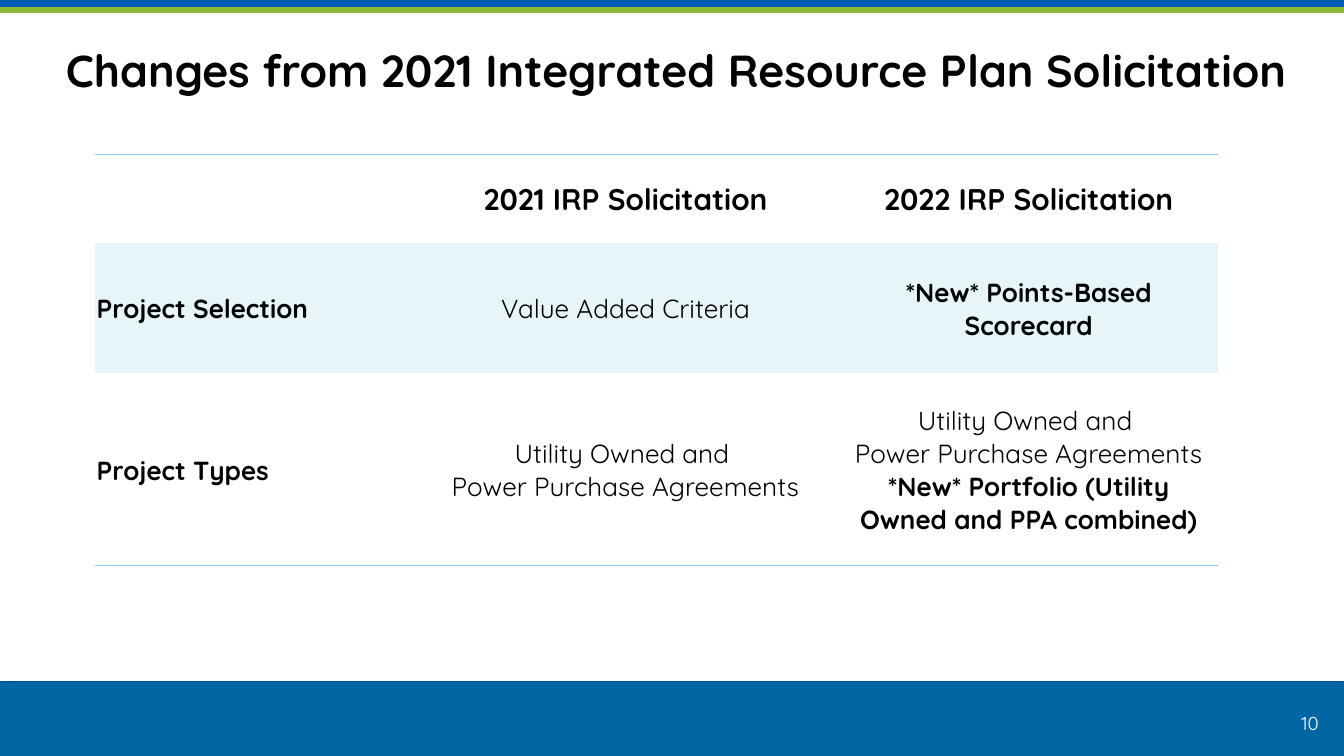
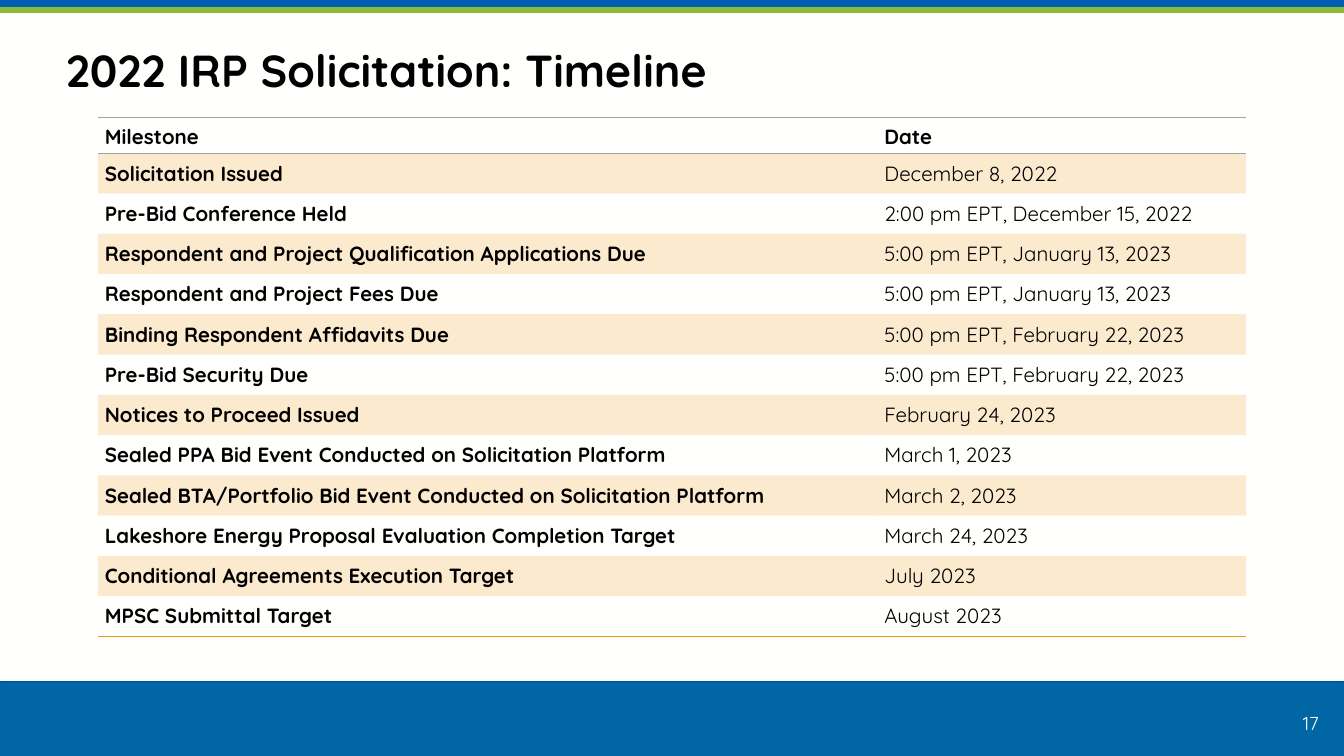
from lxml import etree
from pptx import Presentation
from pptx.dml.color import RGBColor
from pptx.enum.shapes import MSO_SHAPE
from pptx.enum.text import MSO_ANCHOR, MSO_AUTO_SIZE, PP_ALIGN
from pptx.oxml.ns import qn
from pptx.util import Inches, Pt

RECT = MSO_SHAPE.RECTANGLE
LOW, MID = MSO_ANCHOR.BOTTOM, MSO_ANCHOR.MIDDLE
LEFT, MID_X, RIGHT = PP_ALIGN.LEFT, PP_ALIGN.CENTER, PP_ALIGN.RIGHT
FIXED = MSO_AUTO_SIZE.NONE

WIDE, HIGH = Inches(10), Inches(5.625)
FONT = "Quicksand"
PLAIN = "{2D5ABB26-0587-4C30-8999-92F81FD0307C}"
PAPER = RGBColor(0xFF, 0xFF, 0xFE)
INK = RGBColor(0, 0, 0)
BLUE = RGBColor(0x00, 0x5D, 0xB4)
NAVY = RGBColor(0x00, 0x52, 0x94)
GREEN = RGBColor(0x8E, 0xBB, 0x37)
FOOT = RGBColor(0x00, 0x67, 0xA4)
SKY = RGBColor(0x89, 0xCD, 0xE1)
ICE = RGBColor(0xE7, 0xF5, 0xF9)
AMBER = RGBColor(0xF2, 0x98, 0x13)
GREY = RGBColor(0xA0, 0xA0, 0xA0)

# Top, height (percent of the slide), fill, line
BANDS = [
    (0, 1.42, BLUE, None),
    (1.07, 0.53, GREEN, GREEN),
    (90.13, 0.53, BLUE, NAVY),
    (90.49, 9.51, FOOT, FOOT),
]

NEW = "*New*"
DEALS = "Utility Owned and \vPower Purchase Agreements"
CHANGES = [
    ("", "2021 IRP Solicitation", "2022 IRP Solicitation"),
    ("Project Selection", "Value Added Criteria", f"{NEW} Points-Based Scorecard"),
    ("Project Types", DEALS,
     [f"{DEALS} ", f"{NEW} Portfolio (Utility Owned and PPA combined)"]),
]
DATES = [
    ("Milestone", "Date"),
    ("Solicitation Issued", "December 8, 2022"),
    ("Pre-Bid Conference Held", "2:00 pm EPT, December 15, 2022"),
    ("Respondent and Project Qualification Applications Due",
     "5:00 pm EPT, January 13, 2023"),
    ("Respondent and Project Fees Due", "5:00 pm EPT, January 13, 2023"),
    ("Binding Respondent Affidavits Due", "5:00 pm EPT, February 22, 2023"),
    ("Pre-Bid Security Due", "5:00 pm EPT, February 22, 2023"),
    ("Notices to Proceed Issued", "February 24, 2023"),
    ("Sealed PPA Bid Event Conducted on Solicitation Platform", "March 1, 2023"),
    ("Sealed BTA/Portfolio Bid Event Conducted on Solicitation Platform",
     "March 2, 2023"),
    ("Lakeshore Energy Proposal Evaluation Completion Target", "March 24, 2023"),
    ("Conditional Agreements Execution Target", "July 2023"),
    ("MPSC Submittal Target", "August 2023"),
]


def across(part):
    """Turn a percentage of the slide's width into a length."""
    return int(WIDE * part / 100)


def down(part):
    """Turn a percentage of the slide's height into a length."""
    return int(HIGH * part / 100)


def frame(left, top, width, height):
    """Return a box given in percent of the slide."""
    return across(left), down(top), across(width), down(height)


def style(run, size, color, bold=False):
    """Set the font of a run."""
    font = run.font
    font.name, font.size, font.bold = FONT, Pt(size), bold
    font.color.rgb = color


def add_band(slide, top, height, fill, line):
    """Draw one full-width band."""
    band = slide.shapes.add_shape(RECT, *frame(0, top, 100, height))
    band.shadow.inherit = False
    band.fill.solid()
    band.fill.fore_color.rgb = fill
    if line is None:
        band.line.fill.background()
    else:
        band.line.color.rgb = line
        band.line.width = Pt(0.75)


def set_title(slide, text, width):
    """Place and format the title."""
    title = slide.shapes.title
    title.left, title.top, title.width, title.height = frame(3.9, 2.49, width, 11.2)
    body = title.text_frame
    body.text = text
    body.auto_size, body.word_wrap = FIXED, True
    body.vertical_anchor = LOW
    line = body.paragraphs[0]
    line.alignment, line.line_spacing = LEFT, 0.9
    style(line.runs[0], 24, INK, True)


def add_number(slide, number):
    """Write the page number in the footer."""
    body = slide.shapes.add_textbox(*frame(95, 93.87, 4.1, 4.09)).text_frame
    body.text = str(number)
    body.word_wrap, body.vertical_anchor = True, LOW
    line = body.paragraphs[0]
    line.alignment = RIGHT
    style(line.runs[0], 10, PAPER)


def add_slide(deck, title, width, number):
    """Start a slide with its bands, title and page number."""
    slide = deck.slides.add_slide(deck.slide_layouts[5])
    slide.background.fill.solid()
    slide.background.fill.fore_color.rgb = PAPER
    for band in BANDS:
        add_band(slide, *band)
    set_title(slide, title, width)
    add_number(slide, number)
    return slide


def add_rule(cell, side, color, width):
    """Draw a cell border on the top (T) or bottom (B)."""
    props = cell._tc.get_or_add_tcPr()
    rule = etree.Element(qn(f"a:ln{side}"), w=str(Pt(width)))
    fill = etree.SubElement(rule, qn("a:solidFill"))
    etree.SubElement(fill, qn("a:srgbClr"), val=str(color))
    spot = len(props.findall(qn("a:lnT")))
    props.insert(spot, rule)


def tint(cell, color, alpha):
    """Fill a cell, with alpha as a percentage."""
    cell.fill.solid()
    cell.fill.fore_color.rgb = color
    if alpha < 100:
        tone = next(cell._tc.get_or_add_tcPr().iter(qn("a:srgbClr")))
        etree.SubElement(tone, qn("a:alpha"), val=str(alpha * 1000))


def write(cell, text, size, bold, align):
    """Write one cell, with its new items in bold."""
    cell.vertical_anchor = MID
    line = cell.text_frame.paragraphs[0]
    line.alignment = align
    parts = text if isinstance(text, list) else [text]
    line.text = parts[0]
    for run in line.runs:
        style(run, size, INK, bold or parts[0].startswith(NEW))
    for part in parts[1:]:
        run = line.add_run()
        run.text = part
        style(run, size, INK, bold or part.startswith(NEW))


def add_grid(slide, rows, spot, cols, heights, sizes, align, pads, fill, rules):
    """Add a table with a bold header, bold first column and banded rows."""
    box = frame(*spot, sum(cols), sum(heights))
    table = slide.shapes.add_table(len(rows), len(cols), *box).table
    table.first_row = table.horz_banding = False
    table._tbl.tblPr.find(qn("a:tableStyleId")).text = PLAIN
    for col, width in zip(table.columns, cols):
        col.width = across(width)
    for row, height in zip(table.rows, heights):
        row.height = down(height)
    for r, texts in enumerate(rows):
        for c, text in enumerate(texts):
            cell = table.cell(r, c)
            cell.margin_left = cell.margin_right = Inches(pads[0])
            cell.margin_top = Inches(pads[1])
            cell.margin_bottom = Inches(pads[1] if r and pads[1] > 0.01 else 0)
            write(cell, text, sizes[min(r, 1)], r == 0 or c == 0,
                  align if c else LEFT)
            if r % 2:
                tint(cell, *fill)
            else:
                cell.fill.background()
            for at, side, color, width in rules:
                if r == at % len(rows):
                    add_rule(cell, side, color, width)


def main():
    """Build and save the deck."""
    deck = Presentation()
    deck.slide_width, deck.slide_height = WIDE, HIGH

    slide = add_slide(
        deck, "Changes from 2021 Integrated Resource Plan Solicitation", 95.3, 10)
    add_grid(slide, CHANGES, (7.1, 20.44), (23.5, 31.9, 28.1),
             (11.73, 17.24, 25.42), (16, 14), MID_X, (0.01, 0.01), (ICE, 100),
             [(0, "T", SKY, 1), (-1, "B", SKY, 1)])

    slide = add_slide(deck, "2022 IRP Solicitation: Timeline", 92.3, 17)
    add_grid(slide, DATES, (7.3, 15.47), (58, 27.4),
             [4.8] + [5.33] * (len(DATES) - 1), (11, 11), LEFT, (0.05, 0.02),
             (AMBER, 20),
             [(0, "T", GREY, 0.5), (0, "B", GREY, 0.5), (-1, "B", AMBER, 1)])

    deck.save("out.pptx")


if __name__ == "__main__":
    main()
